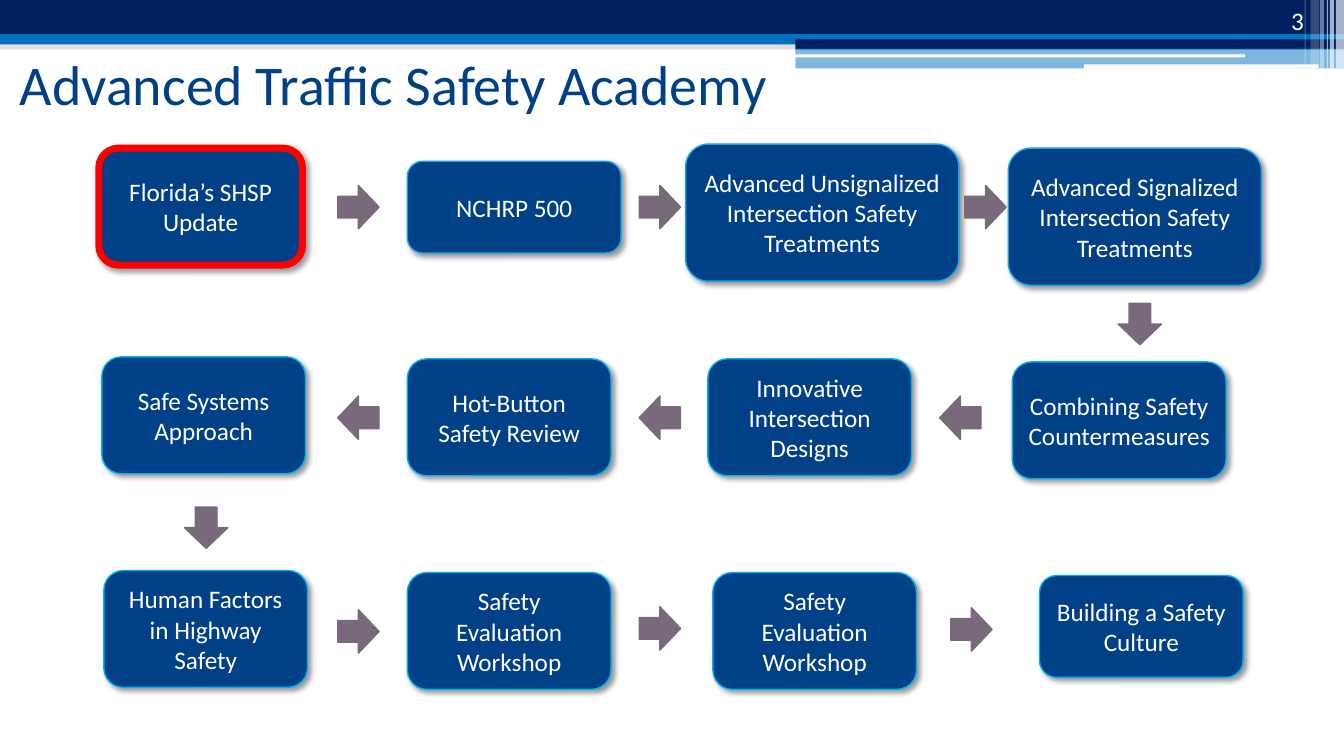
from pptx import Presentation
from pptx.dml.color import RGBColor as RGB
from pptx.enum.shapes import MSO_SHAPE as Kind
from pptx.enum.text import MSO_ANCHOR as Anchor, PP_ALIGN as Align
from pptx.oxml.ns import qn
from pptx.util import Inches, Pt
from lxml.etree import SubElement as Sub

COLS, ROWS = 133.3, 75
WHITE = RGB(0xFF, 0xFF, 0xFF)
NAVY = RGB(0x00, 0x20, 0x60)
BLUE = RGB(0x00, 0x70, 0xC0)
DEEP = RGB(0x00, 0x40, 0x87)
SKY = RGB(0x00, 0xB0, 0xF0)
AZURE = RGB(0x1A, 0xA3, 0xE7)
RED = RGB(0xFF, 0x00, 0x00)
MAUVE = RGB(0x78, 0x69, 0x7B)
PALE = RGB(0xC4, 0xBC, 0xC6)

BANDS = [
    (0, 4, 133.3, 0.9, PALE, 50),
    (0, 0, 133.3, 3.4, NAVY, 100),
    (0, 3.4, 133.3, 1, BLUE, 100),
    (78.9, 3.9, 54.4, 1, NAVY, 100),
    (78.9, 4.8, 54.4, 2, BLUE, 50),
]
SLITS = [(78.8, 5.4, 44.7, 0.3), (107.5, 6.4, 23.3, 0.4)]
STRIPES = [
    (132.5, 0.8, 6.8, 65),
    (131.9, 0.4, 6.8, 65),
    (131.6, 0.1, 6.8, 60),
    (130.9, 0.4, 6.8, 40),
    (130, 0.8, 6.4, 20),
    (129.4, 0.1, 6.4, 30),
]
STEP = (20.2, 11.6)
STEPS = [
    ("Florida’s SHSP Update", 9.8, 14.7, STEP, RED, 5),
    ("NCHRP 500", 40.4, 16, (21.2, 9.1), AZURE, 1),
    ("Advanced Unsignalized Intersection Safety Treatments",
     68, 14.3, (27.1, 13.6), AZURE, 1),
    ("Advanced Signalized Intersection Safety Treatments",
     100, 14.7, (25.1, 13.6), AZURE, 1),
    ("Combining Safety Countermeasures", 100.4, 35.9, (21.2, 11.6), SKY, 1),
    ("Innovative Intersection Designs", 70.2, 35.6, STEP, SKY, 1),
    ("Hot-Button Safety Review", 40.4, 35.6, STEP, SKY, 1),
    ("Safe Systems Approach", 10.1, 35.4, STEP, SKY, 1),
    ("Human Factors in Highway Safety", 10.3, 56.6, STEP, SKY, 1),
    ("Safety Evaluation Workshop", 40.4, 56.8, STEP, SKY, 1),
    ("Safety Evaluation Workshop", 70.7, 56.8, STEP, SKY, 1),
    ("Building a Safety Culture", 103.1, 57.1, (20.2, 10.1), SKY, 1),
]
ARROWS = [
    (33.5, 18.4, "right"), (63.4, 18.4, "right"), (95.7, 18.4, "right"),
    (111, 30, "down"),
    (93.2, 39.3, "left"), (63.4, 39.3, "left"), (33.5, 39.3, "left"),
    (18.4, 50.2, "down"),
    (33.5, 60.5, "right"), (63.4, 60.2, "right"), (94.3, 60.3, "right"),
]


class Deck:
    font = {"name": "Calibri", "size": Pt(18)}

    def __init__(self):
        self.show = Presentation()
        self.show.slide_width = Inches(13.33)
        self.show.slide_height = Inches(7.5)
        self.slide = self.show.slides.add_slide(self.show.slide_layouts[6])

    def place(self, x, y, w, h):
        wide, high = self.show.slide_width / COLS, self.show.slide_height / ROWS
        return [round(n) for n in (x * wide, y * high, w * wide, h * high)]

    def shape(self, kind, spot, fill, edge=None, thick=1, alpha=100):
        item = self.slide.shapes.add_shape(kind, *self.place(*spot))
        item.shadow.inherit = False
        item.fill.solid()
        item.fill.fore_color.rgb = fill
        if edge is None:
            item.line.fill.background()
        else:
            item.line.color.rgb = edge
            item.line.width = Pt(thick)
        if alpha < 100:
            tint = item.element.spPr.find(qn("a:solidFill"))[0]
            Sub(tint, qn("a:alpha"), val=str(alpha * 1000))
        return item

    def letter(self, item, text, anchor, align, color=WHITE, **style):
        frame = item.text_frame
        frame.word_wrap = True
        frame.vertical_anchor = anchor
        para = frame.paragraphs[0]
        para.alignment = align
        run = para.add_run()
        run.text = text
        for key, value in {**self.font, **style}.items():
            setattr(run.font, key, value)
        run.font.color.rgb = color

    def label(self, text, spot, anchor, align, **style):
        item = self.slide.shapes.add_textbox(*self.place(*spot))
        self.letter(item, text, anchor, align, **style)

    def step(self, text, x, y, size, edge, thick):
        item = self.shape(Kind.ROUNDED_RECTANGLE, (x, y, *size), DEEP, edge, thick)
        glow = item.element.spPr.find(qn("a:effectLst"))
        shade = Sub(glow, qn("a:outerShdw"), blurRad=str(Pt(4)), dist=str(Pt(3)),
                    dir="2700000", algn="tl", rotWithShape="0")
        tint = Sub(shade, qn("a:srgbClr"), val="000000")
        Sub(tint, qn("a:alpha"), val="40000")
        self.letter(item, text, Anchor.MIDDLE, Align.CENTER)

    def arrow(self, x, y, way):
        item = self.shape(Kind.RIGHT_ARROW, (x, y, 4.1, 4.3), MAUVE, MAUVE)
        if way == "down":
            item.rotation = 90
        elif way == "left":
            item.element.spPr.find(qn("a:xfrm")).set("flipH", "1")


def main():
    deck = Deck()
    for *spot, fill, alpha in BANDS:
        deck.shape(Kind.RECTANGLE, spot, fill, alpha=alpha)
    for spot in SLITS:
        deck.shape(Kind.ROUNDED_RECTANGLE, spot, WHITE)
    for x, wide, high, alpha in STRIPES:
        deck.shape(Kind.RECTANGLE, (x, 0, wide, high), WHITE, alpha=alpha)
    deck.label("Advanced Traffic Safety Academy", (1, 3.1, 113.6, 10.2),
               Anchor.MIDDLE, Align.LEFT, size=Pt(40), color=DEEP)
    deck.label("3", (119.2, 0, 11.1, 4), Anchor.BOTTOM, Align.RIGHT)
    for step in STEPS:
        deck.step(*step)
    for arrow in ARROWS:
        deck.arrow(*arrow)
    deck.show.save("out.pptx")


if __name__ == "__main__":
    main()
